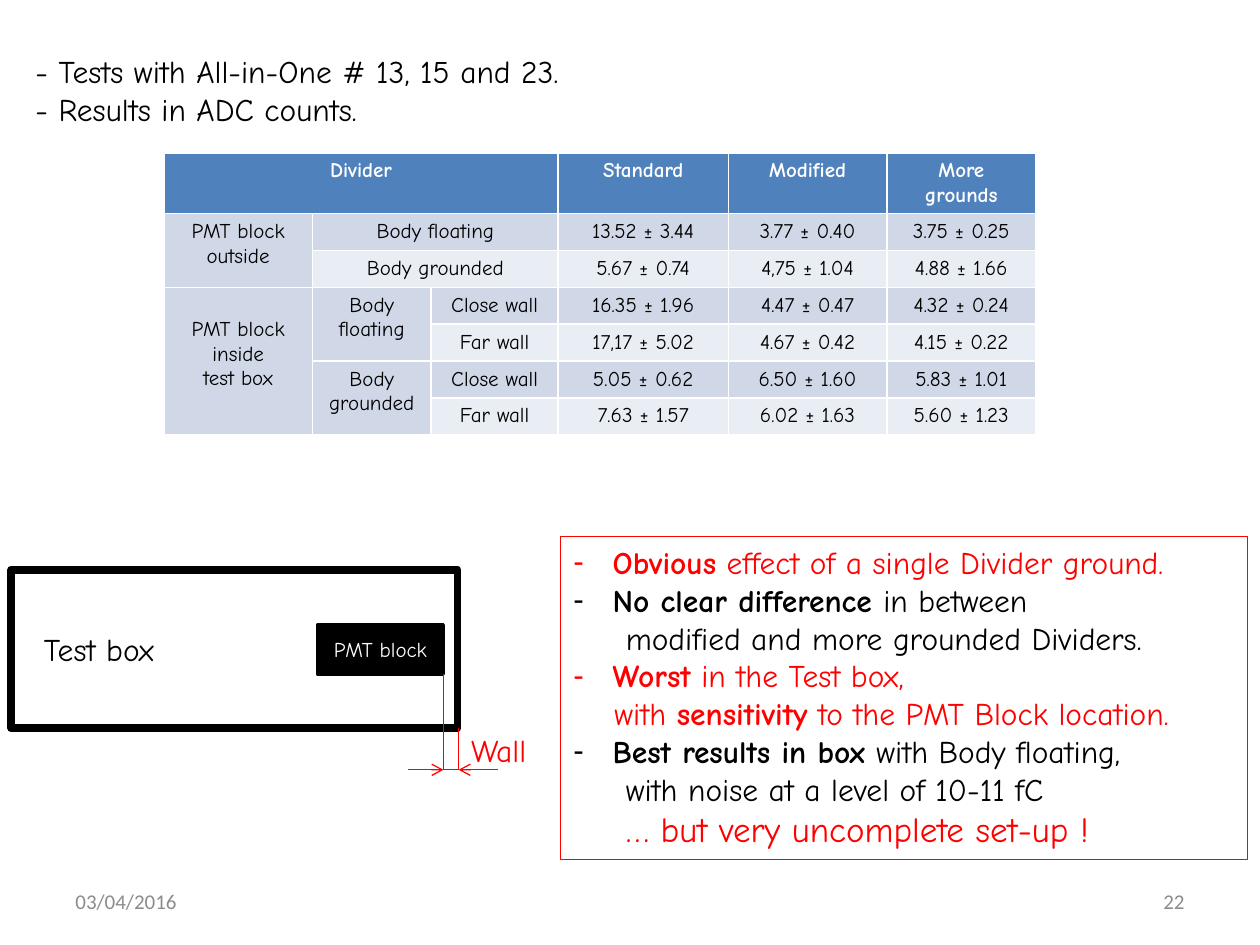
from dataclasses import dataclass
from typing import NamedTuple

from lxml import etree
from pptx import Presentation
from pptx import util as u
from pptx.dml.color import RGBColor
from pptx.enum import shapes, text
from pptx.oxml import ns

BLACK = RGBColor(0, 0, 0)
WHITE = RGBColor(255, 255, 255)
RED = RGBColor(255, 0, 0)
GREY = RGBColor(0x8C, 0x8C, 0x8C)
BLUE = RGBColor(0x4F, 0x81, 0xBD)
BAND = RGBColor(0xD0, 0xD8, 0xE8)
PALE = RGBColor(0xE9, 0xED, 0xF4)
COMIC = "Comic Neue"
LEFT, MID, RIGHT = text.PP_ALIGN.LEFT, text.PP_ALIGN.CENTER, text.PP_ALIGN.RIGHT
TOP, CENTRE = text.MSO_ANCHOR.TOP, text.MSO_ANCHOR.MIDDLE


class Box(NamedTuple):
    left: float
    top: float
    width: float
    height: float


@dataclass
class Label:
    words: str
    box: Box
    size: int = 18
    color: RGBColor = BLACK
    face: str = COMIC
    align: int = LEFT
    anchor: int = TOP


@dataclass
class Line:
    start: tuple
    end: tuple
    arrow: bool = False


@dataclass
class Point:
    runs: list  # (words, bold)
    color: RGBColor = BLACK
    bullet: bool = True
    indent: float = 22.5
    size: int = 18


class Cell(NamedTuple):
    row: int
    col: int
    words: str
    rows: int = 1
    cols: int = 1


def points(*nums: float) -> list:
    return [u.Pt(n) for n in nums]


def style(font, color: RGBColor, **form) -> None:
    form = {"name": COMIC, "bold": False, **form}
    for key, val in form.items():
        setattr(font, key, val)
    font.color.rgb = color


def write(frame, words: str, color: RGBColor, size: int, align=LEFT, **form) -> None:
    for i, part in enumerate(words.split("\n")):
        para = frame.paragraphs[0] if i == 0 else frame.add_paragraph()
        para.alignment = align
        run = para.add_run()
        run.text = part
        style(run.font, color, size=u.Pt(size), **form)


def place(shape, box: Box) -> None:
    for key, val in zip(Box._fields, points(*box)):
        setattr(shape, key, val)


def setup(frame, anchor=TOP) -> None:
    form = {"word_wrap": True, "auto_size": text.MSO_AUTO_SIZE.NONE,
            "vertical_anchor": anchor}
    for key, val in form.items():
        setattr(frame, key, val)


def add_label(slide, label: Label) -> None:
    frame = slide.shapes.add_textbox(*points(*label.box)).text_frame
    setup(frame, label.anchor)
    write(frame, label.words, label.color, label.size, label.align, name=label.face)


def add_rect(slide, box: Box, width: float, solid: bool):
    rect = slide.shapes.add_shape(shapes.MSO_SHAPE.RECTANGLE, *points(*box))
    rect.shadow.inherit = False
    if solid:
        rect.fill.solid()
        rect.fill.fore_color.rgb = BLACK
    else:
        rect.fill.background()
    rect.line.color.rgb = BLACK
    rect.line.width = u.Pt(width)
    return rect


def add_line(slide, line: Line) -> None:
    link = slide.shapes.add_connector(
        shapes.MSO_CONNECTOR.STRAIGHT, *points(*line.start, *line.end))
    link.line.color.rgb = RED
    link.line.width = u.Pt(0.75)
    props = link._element.spPr
    etree.SubElement(props, ns.qn("a:effectLst"))
    if line.arrow:
        tail = etree.SubElement(props.find(ns.qn("a:ln")), ns.qn("a:tailEnd"))
        tail.set("type", "arrow")


def add_point(para, item: Point) -> None:
    para.alignment = LEFT
    para.space_before = u.Pt(0)
    props = para._p.get_or_add_pPr()
    props.set("marL", str(u.Pt(item.indent)))
    props.set("indent", str(-u.Pt(item.indent) if item.bullet else 0))
    if item.bullet:
        etree.SubElement(props, ns.qn("a:buChar")).set("char", "-")
    else:
        etree.SubElement(props, ns.qn("a:buNone"))
    for words, bold in item.runs:
        run = para.add_run()
        run.text = words
        style(run.font, item.color, size=u.Pt(item.size), bold=bold)


def add_grid(slide) -> None:
    wide = [85, 67.7, 72.7, 97.2, 90.7, 85]
    high = [34.8] + [21] * 6
    box = Box(93.6, 87.3, sum(wide), sum(high))
    grid = slide.shapes.add_table(len(high), len(wide), *points(*box)).table
    for col, size in zip(grid.columns, wide):
        col.width = u.Pt(size)
    for row, size in zip(grid.rows, high):
        row.height = u.Pt(size)

    heads = [
        Cell(0, 0, "Divider", cols=3),
        Cell(1, 0, "PMT block\noutside", rows=2),
        Cell(1, 1, "Body floating", cols=2),
        Cell(2, 1, "Body grounded", cols=2),
        Cell(3, 0, "PMT block\ninside\ntest box", rows=4),
        Cell(3, 1, "Body\nfloating", rows=2),
        Cell(5, 1, "Body\ngrounded", rows=2),
    ]
    heads += [Cell(r, 2, "Close wall" if r % 2 else "Far wall") for r in range(3, 7)]
    data = [
        ("Standard", "Modified", "More grounds"),
        ("13.52 ± 3.44", "3.77 ± 0.40", "3.75 ± 0.25"),
        ("5.67 ± 0.74", "4,75 ± 1.04", "4.88 ± 1.66"),
        ("16.35 ± 1.96", "4.47 ± 0.47", "4.32 ± 0.24"),
        ("17,17 ± 5.02", "4.67 ± 0.42", "4.15 ± 0.22"),
        ("5.05 ± 0.62", "6.50 ± 1.60", "5.83 ± 1.01"),
        ("7.63 ± 1.57", "6.02 ± 1.63", "5.60 ± 1.23"),
    ]
    vals = [Cell(r, c, word) for r, row in enumerate(data)
            for c, word in enumerate(row, 3)]
    for item in heads + vals:
        cell = grid.cell(item.row, item.col)
        if item.rows * item.cols > 1:
            cell.merge(grid.cell(item.row + item.rows - 1, item.col + item.cols - 1))
        top = item.row == 0
        cell.fill.solid()
        cell.fill.fore_color.rgb = BLUE if top else BAND if item.row % 2 else PALE
        if item.rows == 4:
            cell.margin_top = u.Pt(17.5)
        write(cell.text_frame, item.words, WHITE if top else BLACK, 12, MID, bold=top)


def main() -> None:
    deck = Presentation()
    deck.slide_width, deck.slide_height = points(720, 540)
    slide = deck.slides.add_slide(deck.slide_layouts[1])

    # Heading and results
    title = slide.shapes.title
    place(title, Box(13, 26, 353, 51))
    setup(title.text_frame)
    write(title.text_frame, "- Tests with All-in-One # 13, 15 and 23.\n"
          "- Results in ADC counts.", BLACK, 18)
    add_grid(slide)

    # Test box sketch
    add_rect(slide, Box(6.5, 325.5, 255, 90.7), 4.5, False)
    block = add_rect(slide, Box(181.4, 357.1, 72, 28.1), 2, True)
    setup(block.text_frame, CENTRE)
    write(block.text_frame, "PMT block", WHITE, 12, MID)
    near, wall, base = 253.4, 262.1, 439.9
    for line in (
        Line((near, 385.2), (near, base)),
        Line((wall, 416.2), (wall, base)),
        Line((wall, base), (near, base)),
        Line((233.3, base), (near, base), True),
        Line((284.4, base), (wall, base), True),
    ):
        add_line(slide, line)

    # Labels and footer
    for label in (
        Label("Test box", Box(18, 356.4, 91, 29)),
        Label("Wall", Box(262.1, 414, 53, 29), color=RED),
        Label("03/04/2016", Box(36, 500.4, 168, 28.8), 12, GREY, "Calibri", LEFT, CENTRE),
        Label("22", Box(516, 500.4, 168, 28.8), 12, GREY, "Calibri", RIGHT, CENTRE),
    ):
        add_label(slide, label)

    # Findings
    body = slide.placeholders[1]
    place(body, Box(320.4, 306.7, 392.4, 184.3))
    body.line.color.rgb = RED
    body.line.width = u.Pt(0.75)
    frame = body.text_frame
    setup(frame)
    for i, item in enumerate((
        Point([("Obvious", True), (" effect of a single Divider ground.", False)], RED),
        Point([("No clear difference ", True), ("in between", False)]),
        Point([("modified and more grounded Dividers.", False)], BLACK, False, 30),
        Point([("Worst", True), (" in the Test box,", False)], RED),
        Point([("with ", False), ("sensitivity", True),
               (" to the PMT Block location.", False)], RED, False, 23.5),
        Point([("Best results in box ", True), ("with Body floating,", False)]),
        Point([("with noise at a level of 10-11 fC", False)], BLACK, False, 30),
        Point([("… but very uncomplete set-up !", False)], RED, False, 30, 20),
    )):
        add_point(frame.paragraphs[0] if i == 0 else frame.add_paragraph(), item)

    deck.save("out.pptx")


if __name__ == "__main__":
    main()
